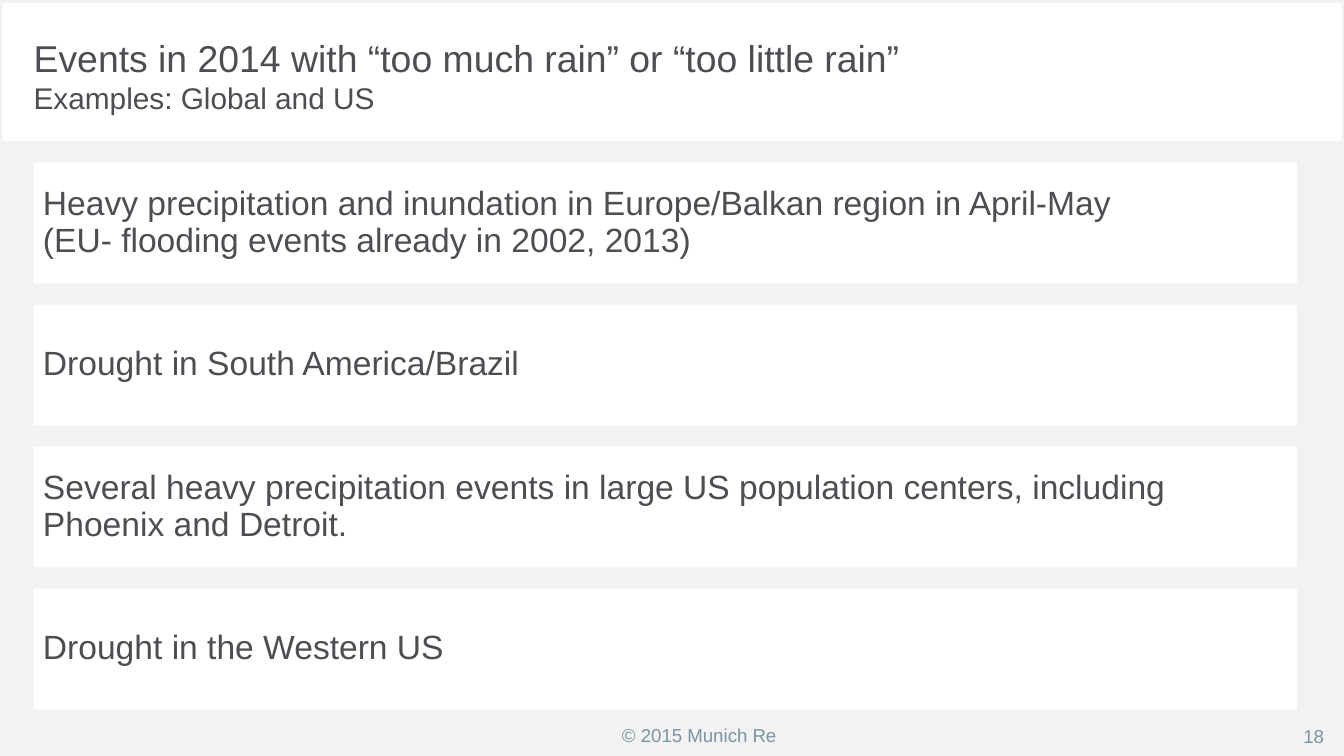
from dataclasses import dataclass

from pptx import Presentation
from pptx.dml.color import RGBColor
from pptx.enum import shapes, text
from pptx.util import Inches, Pt


@dataclass(frozen=True)
class Theme:
    font: str = "Arial"
    ink: str = "4D4E53"
    pale: str = "7A94A3"
    gray: str = "F2F2F2"
    white: str = "FFFFFF"
    title: int = 20
    sub: int = 16
    body: int = 18
    foot: int = 10


THEME = Theme()
TOP, LAST = 1.21, 4.38
EVENTS = [
    "Heavy precipitation and inundation in Europe/Balkan region in April-May\v"
    "(EU- flooding events already in 2002, 2013)",
    "Drought in South America/Brazil",
    "Several heavy precipitation events in large US population centers, "
    "including Phoenix and Detroit.",
    "Drought in the Western US",
]


def color(code):
    return RGBColor.from_string(code)


def add_rect(slide, box, fill=None, line=None):
    rect = slide.shapes.add_shape(
        shapes.MSO_SHAPE.RECTANGLE, *map(Inches, box))
    rect.shadow.inherit = False
    if fill:
        rect.fill.solid()
        rect.fill.fore_color.rgb = color(fill)
    else:
        rect.fill.background()
    if line:
        rect.line.color.rgb = color(line)
        rect.line.width = Pt(2)
    else:
        rect.line.fill.background()
    return rect


def set_text(shape, words, size, ink, pad, anchor="TOP", align="LEFT", wrap=True):
    frame = shape.text_frame
    frame.word_wrap = wrap
    frame.vertical_anchor = text.MSO_ANCHOR[anchor]
    frame.margin_left = frame.margin_right = Inches(pad[0])
    frame.margin_top = frame.margin_bottom = Inches(pad[1])
    para = frame.paragraphs[0]
    para.text = words
    para.alignment = text.PP_ALIGN[align]
    para.font.name = THEME.font
    para.font.size = Pt(size)
    para.font.color.rgb = color(ink)
    return para


def add_label(slide, box, words, size, ink, pad, **style):
    label = slide.shapes.add_textbox(*map(Inches, box))
    return set_text(label, words, size, ink, pad, **style)


def add_title(slide):
    para = add_label(
        slide, (0.25, 0.26, 7.48, 0.59),
        "Events in 2014 with “too much rain” or “too little rain”\v",
        THEME.title, THEME.ink, (0, 0))
    sub = para.add_run()
    sub.text = "Examples: Global and US"
    sub.font.size = Pt(THEME.sub)


def add_event(slide, top, words):
    card = add_rect(slide, (0.25, top, 9.4, 0.9), THEME.white)
    para = set_text(card, words, THEME.body, THEME.ink, (0.07, 0.07),
                    anchor="MIDDLE")
    para.line_spacing = 0.9


def main():
    deck = Presentation()
    deck.slide_width = Inches(10)
    deck.slide_height = deck.slide_width * 9 // 16
    slide = deck.slides.add_slide(deck.slide_layouts[6])
    add_rect(slide, (0, 1.05, 10, 4.58), THEME.gray)
    add_rect(slide, (0, 0.01, 10, 5.62), line=THEME.gray)
    add_title(slide)
    step = (LAST - TOP) / (len(EVENTS) - 1)
    for row, words in enumerate(EVENTS):
        add_event(slide, TOP + step * row, words)
    pad = (0.1, 0.05)
    add_label(slide, (4.53, 5.34, 1.36, 0.27), "© 2015 Munich Re",
              THEME.foot, THEME.pale, pad, wrap=False)
    add_label(slide, (9.2, 5.34, 0.75, 0.27), "18",
              THEME.foot, THEME.pale, pad, anchor="MIDDLE", align="RIGHT")
    deck.save("out.pptx")


if __name__ == "__main__":
    main()
